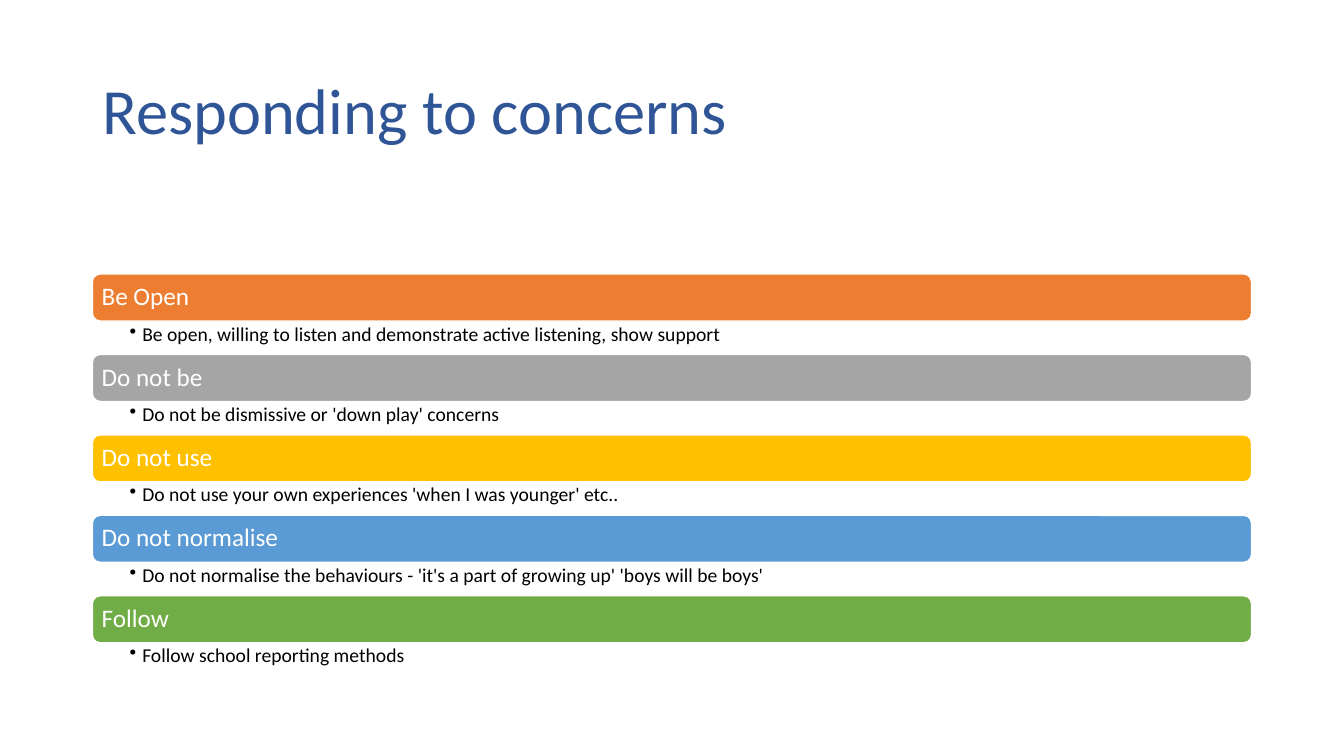
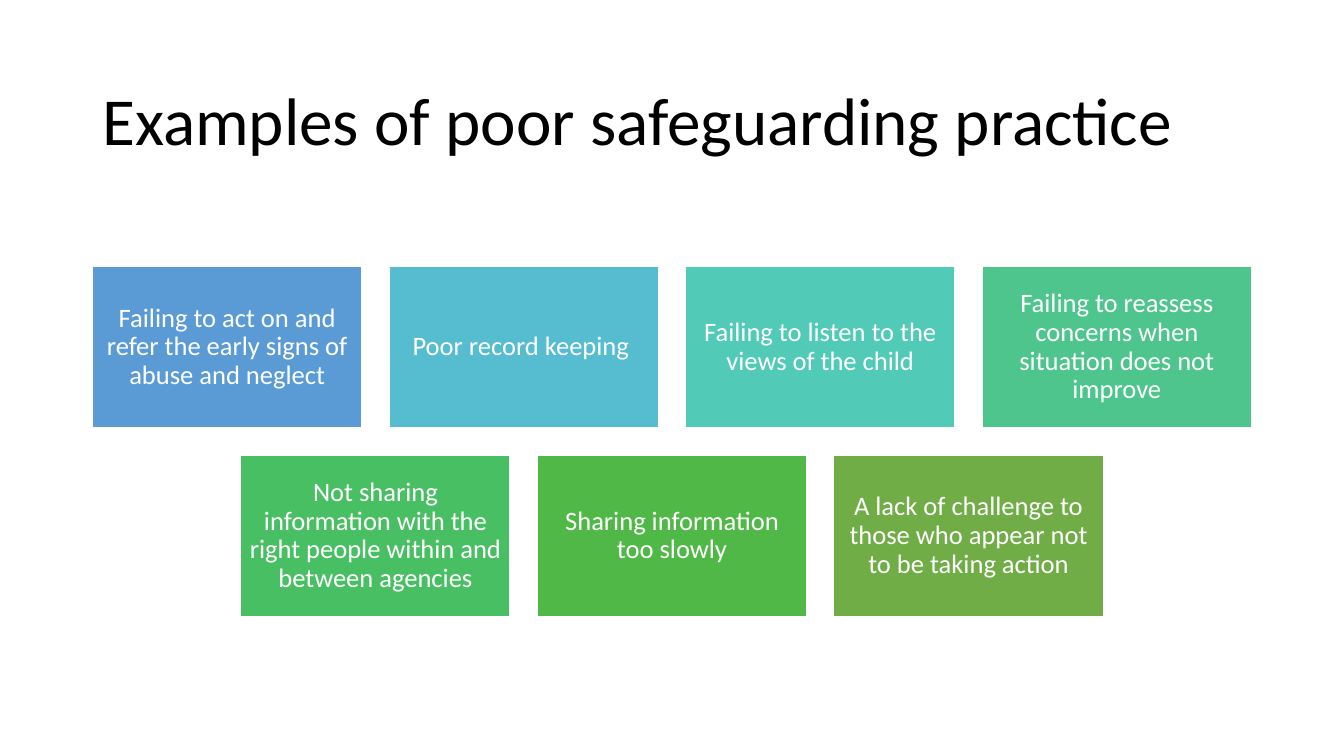
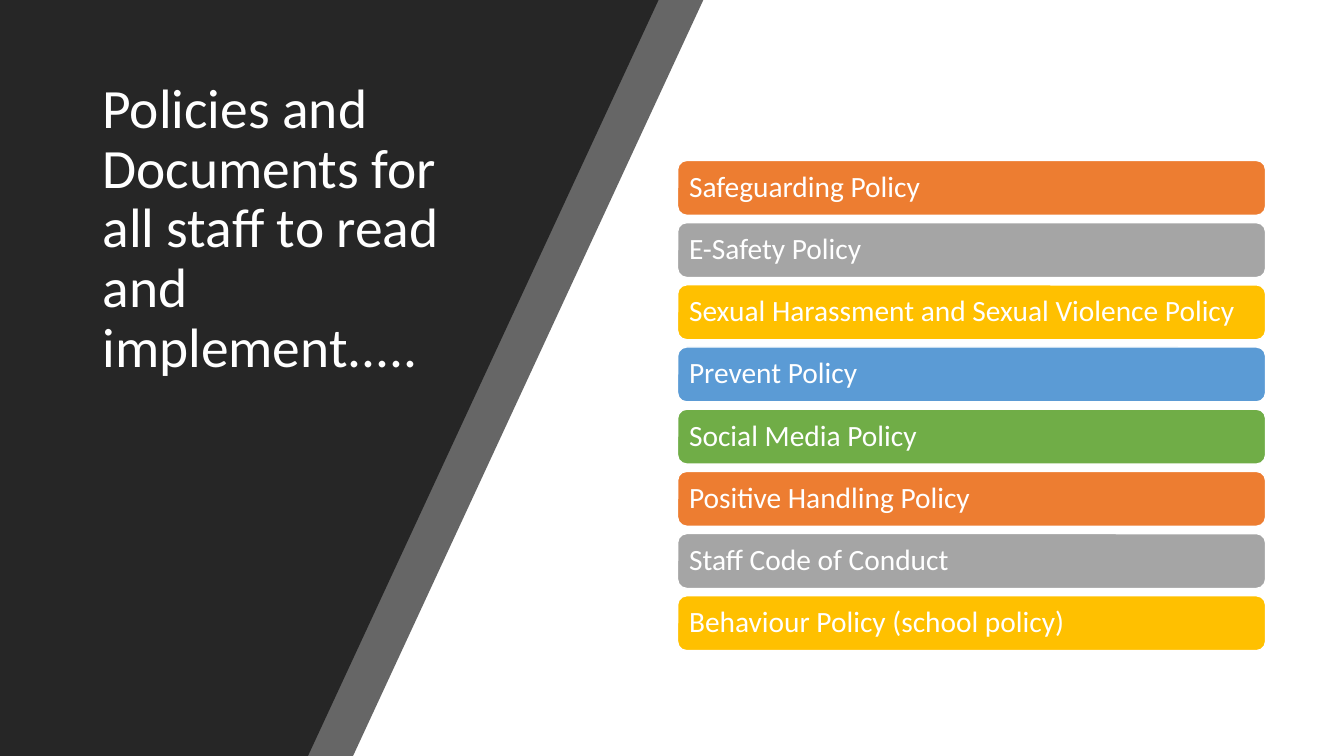
from lxml import etree
from pptx import Presentation
from pptx.dml.color import RGBColor
from pptx.enum import shapes, text
from pptx.oxml import ns
from pptx.util import Pt

FONT = "Calibri"
WHITE, BLACK, NAVY, CHARCOAL = "FFFFFF", "000000", "2F5597", "262626"
ACCENTS = ["ED7D31", "A5A5A5", "FFC000", "5B9BD5", "70AD47"]
WIDTH, HEIGHT = 960, 540
MARGIN = 66
CONTENT_WIDTH = WIDTH - 2 * MARGIN

RESPONSES = [
    ("Be Open", "Be open, willing to listen and demonstrate active listening, show support"),
    ("Do not be", "Do not be dismissive or 'down play' concerns"),
    ("Do not use", "Do not use your own experiences 'when I was younger' etc.."),
    ("Do not normalise", "Do not normalise the behaviours - 'it's a part of growing up' 'boys will be boys'"),
    ("Follow", "Follow school reporting methods"),
]
POOR_PRACTICES = [
    [("Failing to act on and refer the early signs of abuse and neglect", "5B9BD5"),
     ("Poor record keeping ", "56BCD0"),
     ("Failing to listen to the views of the child", "52CAB8"),
     ("Failing to reassess concerns when situation does not improve", "4DC58D")],
    [("Not sharing information with the right people within and between agencies", "49BF64"),
     ("Sharing information too slowly", "50B846"),
     ("A lack of challenge to those who appear not to be taking action", "70AD47")],
]
POLICIES = [
    "Safeguarding Policy",
    "E-Safety Policy",
    "Sexual Harassment and Sexual Violence Policy",
    "Prevent Policy",
    "Social Media Policy",
    "Positive Handling Policy",
    "Staff Code of Conduct",
    "Behaviour Policy (school policy)",
]


def rgb(value):
    """Turn a hex string into a colour."""
    return RGBColor.from_string(value)


def points(*lengths):
    """Turn numbers into lengths in points."""
    return [Pt(length) for length in lengths]


def write(frame, wording, size, color, insets, align=text.PP_ALIGN.LEFT,
          anchor=text.MSO_ANCHOR.MIDDLE):
    """Fill a text frame with one formatted paragraph and return it."""
    frame.word_wrap = True
    frame.auto_size = text.MSO_AUTO_SIZE.NONE
    frame.vertical_anchor = anchor
    (frame.margin_left, frame.margin_top,
     frame.margin_right, frame.margin_bottom) = points(*insets)
    paragraph = frame.paragraphs[0]
    paragraph.text = wording
    paragraph.alignment = align
    paragraph.line_spacing = 0.9
    paragraph.font.name = FONT
    paragraph.font.size = Pt(size)
    paragraph.font.color.rgb = rgb(color)
    return paragraph


def titled_slide(deck, wording, box, size, color):
    """Add a title-only slide and place its title."""
    slide = deck.slides.add_slide(deck.slide_layouts[5])
    title = slide.shapes.title
    title.left, title.top, title.width, title.height = points(*box)
    write(title.text_frame, wording, size, color, (7.2, 3.6, 7.2, 3.6))
    return slide


def label_block(slide, outline, box, wording, fill, size, inset,
                align=text.PP_ALIGN.LEFT):
    """Draw a filled block with a white label."""
    block = slide.shapes.add_shape(outline, *points(*box))
    block.shadow.inherit = False
    block.fill.solid()
    block.fill.fore_color.rgb = rgb(fill)
    block.line.color.rgb = rgb(WHITE)
    block.line.width = Pt(1)
    write(block.text_frame, wording, size, WHITE, [inset] * 4, align)


def detail_line(slide, box, wording):
    """Place a bulleted line of explanation."""
    detail = slide.shapes.add_textbox(*points(*box))
    paragraph = write(detail.text_frame, wording, 14, BLACK, (26.64, 2.2, 10, 2.2),
                      anchor=text.MSO_ANCHOR.TOP)
    properties = paragraph._p.get_or_add_pPr()
    properties.set("marL", str(Pt(9)))
    properties.set("indent", str(Pt(-9)))
    etree.SubElement(properties, ns.qn("a:buChar")).set("char", "•")


def bar_list(slide, box, pitch, bar_height, size, inset, entries):
    """Stack accent-coloured bars, each with an optional detail below."""
    left, top, width = box
    for index, (heading, detail) in enumerate(entries):
        bar_top = top + index * pitch
        label_block(slide, shapes.MSO_SHAPE.ROUNDED_RECTANGLE,
                    (left, bar_top, width, bar_height), heading,
                    ACCENTS[index % len(ACCENTS)], size, inset)
        if detail:
            detail_line(slide, (left, bar_top + bar_height, width, pitch - bar_height), detail)


def card_grid(slide, left, top, width, rows):
    """Lay out rows of cards, centring the shorter ones."""
    gap_share, columns = 0.1, max(map(len, rows))
    card_width = width / (columns + gap_share * (columns - 1))
    card_height, gap = 0.6 * card_width, gap_share * card_width
    for row_index, row in enumerate(rows):
        row_width = len(row) * (card_width + gap) - gap
        row_left = left + (width - row_width) / 2
        card_top = top + row_index * (card_height + gap)
        for column, (wording, fill) in enumerate(row):
            label_block(slide, shapes.MSO_SHAPE.RECTANGLE,
                        (row_left + column * (card_width + gap), card_top,
                         card_width, card_height),
                        wording, fill, 19, 5.76, text.PP_ALIGN.CENTER)


def slanted_panel(slide, top_width, bottom_width, opacity):
    """Draw a dark left panel with a slanted right edge."""
    outline = slide.shapes.build_freeform(0, 0)
    corners = [(top_width, 0), (bottom_width, HEIGHT), (0, HEIGHT)]
    outline.add_line_segments([points(*corner) for corner in corners], close=True)
    panel = outline.convert_to_shape()
    panel.shadow.inherit = False
    panel.line.fill.background()
    panel.fill.solid()
    panel.fill.fore_color.rgb = rgb(CHARCOAL)
    if opacity < 100:
        color = panel.element.spPr.find(".//" + ns.qn("a:srgbClr"))
        etree.SubElement(color, ns.qn("a:alpha")).set("val", str(opacity * 1000))


def responding_slide(deck):
    """Build the slide on responding to concerns."""
    slide = titled_slide(deck, "Responding to concerns",
                         (MARGIN, 28.8, CONTENT_WIDTH, 104.4), 46, NAVY)
    bar_list(slide, (MARGIN, 195.7, CONTENT_WIDTH), 57.46, 33.6, 18, 5, RESPONSES)


def poor_practice_slide(deck):
    """Build the slide of poor practice examples."""
    slide = titled_slide(deck, "Examples of poor safeguarding practice",
                         (MARGIN, 44, CONTENT_WIDTH, 89.2), 48, BLACK)
    card_grid(slide, MARGIN, 190.2, CONTENT_WIDTH, POOR_PRACTICES)


def policies_slide(deck):
    """Build the slide listing the policies to read."""
    slide = titled_slide(deck, "Policies and Documents for all staff to read and implement.....",
                         (MARGIN, 34.6, 258, 259.2), 39.6, WHITE)
    slanted_panel(slide, 502.4, 252.2, 70)
    slanted_panel(slide, 470.4, 220, 100)
    title = slide.shapes.title.element
    title.getparent().append(title)
    bar_list(slide, (484, 114.6, 420), 44.42, 39.2, 21, 6.3,
             [(policy, None) for policy in POLICIES])


def main():
    """Build and save the deck."""
    deck = Presentation()
    deck.slide_width, deck.slide_height = points(WIDTH, HEIGHT)
    responding_slide(deck)
    poor_practice_slide(deck)
    policies_slide(deck)
    deck.save("out.pptx")


if __name__ == "__main__":
    main()
